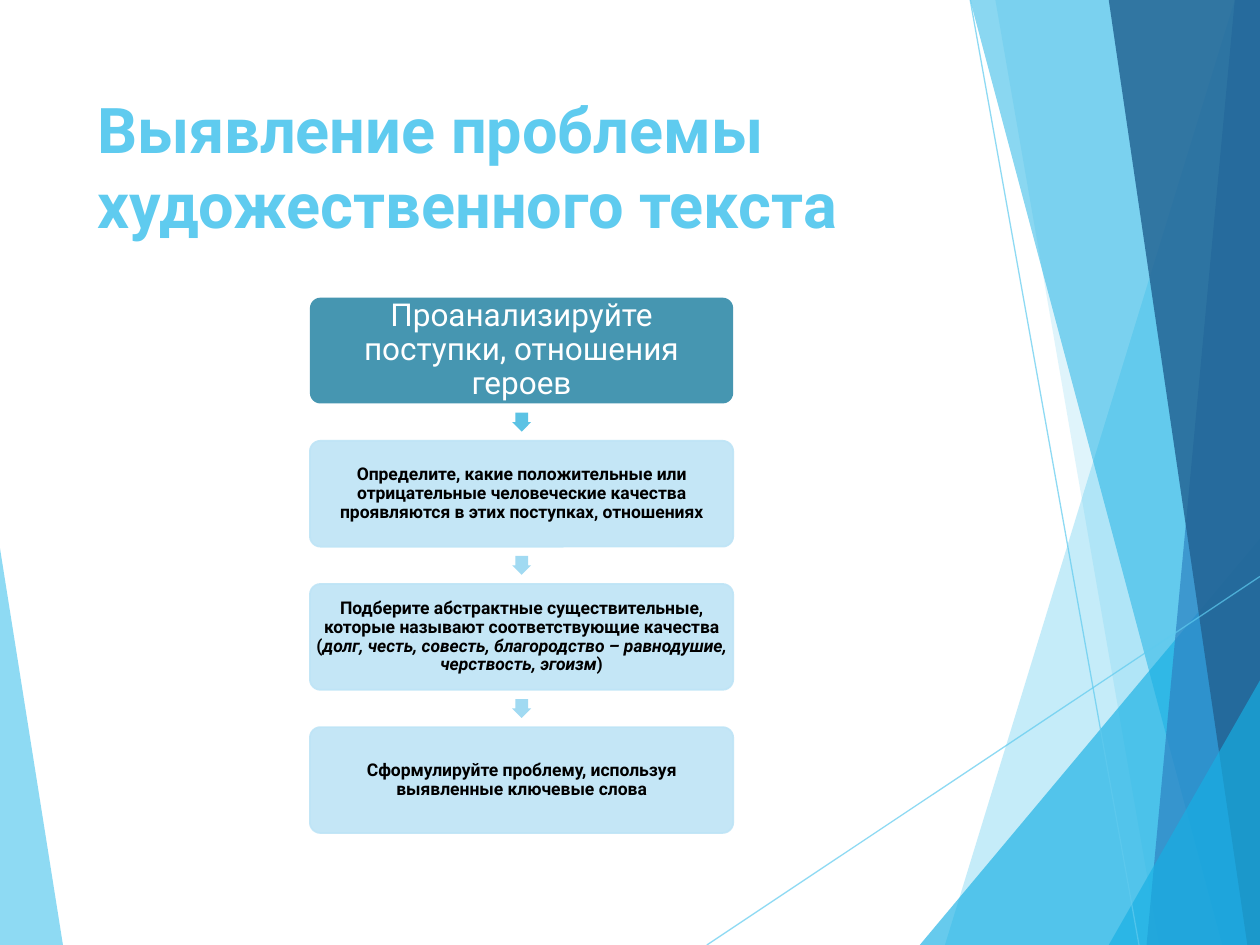
from lxml import etree
from pptx import Presentation
from pptx.dml.color import RGBColor
from pptx.enum.shapes import MSO_CONNECTOR, MSO_SHAPE
from pptx.enum.text import MSO_ANCHOR, MSO_AUTO_SIZE, PP_ALIGN
from pptx.oxml.ns import qn
from pptx.util import Inches, Pt

ROUNDED, ARROW = MSO_SHAPE.ROUNDED_RECTANGLE, MSO_SHAPE.RIGHT_ARROW
STRAIGHT = MSO_CONNECTOR.STRAIGHT
TOP, MIDDLE = MSO_ANCHOR.TOP, MSO_ANCHOR.MIDDLE
LEFT, CENTER = PP_ALIGN.LEFT, PP_ALIGN.CENTER
FONT = "Roboto"
C = {
    "sky": "5FCBEF", "cyan": "17B0E4", "blue": "2E83C3", "navy": "226292",
    "teal": "4696B1", "pale": "BEE4F6", "white": "FFFFFF", "black": "000000",
    "arrow": "5BC2E4", "pale_arrow": "A1DAF2",
}

prs = Presentation()
prs.slide_width, prs.slide_height = Inches(10), Inches(7.5)
W, H = prs.slide_width / 100, prs.slide_height / 100  # one percent of the slide
s = prs.slides.add_slide(prs.slide_layouts[5])


def paint(fmt, color, opacity=100):
    """Solid colour, with opacity in percent, for a fill."""
    fmt.solid()
    fmt.fore_color.rgb = RGBColor.from_string(C[color])
    if opacity < 100:
        clr = fmt._xPr.find(qn("a:solidFill"))[0]
        etree.SubElement(clr, qn("a:alpha")).set("val", str(opacity * 1000))


# Backdrop: left wedge, two thin lines, then the overlapping facets on the right
wedge = ("sky", 70, [(0, 58.5), (4.9, 100), (0, 100)])
facets = [
    ("sky", 36, [(97.5, 0), (75.4, 100), (100, 100), (100, 0)]),
    ("sky", 20, [(78.8, 0), (91.9, 100), (100, 100), (100, 0)]),
    ("cyan", 66, [(72.6, 100), (100, 57.2), (100, 100)]),
    ("cyan", 50, [(76.7, 0), (97, 100), (100, 100), (100, 0)]),
    ("blue", 70, [(98.1, 0), (90.7, 100), (100, 100), (100, 0)]),
    ("navy", 82, [(88.5, 0), (98.8, 100), (100, 100), (100, 0)]),
    ("cyan", 66, [(88.2, 100), (100, 71.5), (100, 100)]),
]
for color, opacity, points in [wedge] + facets:
    (x, y), *rest = points
    fb = s.shapes.build_freeform(x, y, scale=(W, H))
    fb.add_line_segments(rest, close=True)
    sp = fb.convert_to_shape()
    sp.shadow.inherit = False
    paint(sp.fill, color, opacity)
    sp.line.fill.background()

for x1, y1, x2, y2 in [(56.1, 100, 100, 61), (77, 0, 90.4, 100)]:
    ln = s.shapes.add_connector(STRAIGHT, int(x1 * W), int(y1 * H), int(x2 * W), int(y2 * H))
    ln.line.width = Pt(0.75)
    paint(ln.line.fill, "sky", 70)
    etree.SubElement(ln._element.spPr, qn("a:effectLst"))

# Title
title = s.shapes.title
title.left, title.top = int(6.7 * W), int(8.9 * H)
title.width, title.height = int(69.4 * W), int(19.2 * H)
tf = title.text_frame
tf.text = "Выявление проблемы художественного текста"
tf.word_wrap, tf.auto_size, tf.vertical_anchor = True, MSO_AUTO_SIZE.NONE, TOP
p = tf.paragraphs[0]
p.alignment = LEFT
p.font.name, p.font.size, p.font.bold = FONT, Pt(36), True
p.font.color.rgb = RGBColor.from_string(C["sky"])

# Column of steps, each a list of (text, italic) runs
steps = [
    [("Проанализируйте поступки, отношения героев", False)],
    [("Определите, какие положительные или отрицательные человеческие качества "
      "проявляются в этих поступках, отношениях", False)],
    [("Подберите абстрактные существительные, которые называют "
      "соответствующие качества (", False),
     ("долг, честь, совесть, благородство – равнодушие, черствость, эгоизм", True),
     (")", False)],
    [("Сформулируйте проблему, используя выявленные ключевые слова", False)],
]
left, top, width, height, pitch = 24.6 * W, 31.5 * H, 33.6 * W, 11.2 * H, 15.15 * H
arrow_size = 1.5 * W
for i, runs in enumerate(steps):
    first = i == 0
    y = top + i * pitch
    sp = s.shapes.add_shape(ROUNDED, int(left), int(y), int(width), int(height))
    sp.adjustments[0] = 0.1
    sp.shadow.inherit = False
    if first:
        paint(sp.fill, "teal")
        sp.line.fill.background()
    else:
        paint(sp.fill, "pale", 90)
        sp.line.width = Pt(1)
        paint(sp.line.fill, "pale", 90)
    tf = sp.text_frame
    tf.word_wrap, tf.vertical_anchor = True, MIDDLE
    inset = Inches(0.03 if first else 0.01)
    tf.margin_left = tf.margin_right = tf.margin_top = tf.margin_bottom = inset
    p = tf.paragraphs[0]
    p.alignment, p.line_spacing = CENTER, 0.9
    p.font.name, p.font.size, p.font.bold = FONT, Pt(18 if first else 10), not first
    p.font.color.rgb = RGBColor.from_string(C["white" if first else "black"])
    for text, italic in runs:
        r = p.add_run()
        r.text = text
        if italic:
            r.font.italic = True

    # Arrow in the middle of the gap to the next step
    if i < len(steps) - 1:
        arrow_x = left + (width - arrow_size) / 2
        arrow_y = y + (height + pitch - arrow_size) / 2
        sp = s.shapes.add_shape(ARROW, int(arrow_x), int(arrow_y), int(arrow_size), int(arrow_size))
        sp.rotation = 90
        sp.adjustments[0], sp.adjustments[1] = 0.67, 0.5
        sp.shadow.inherit = False
        paint(sp.fill, "arrow" if first else "pale_arrow")
        sp.line.fill.background()

prs.save("out.pptx")
